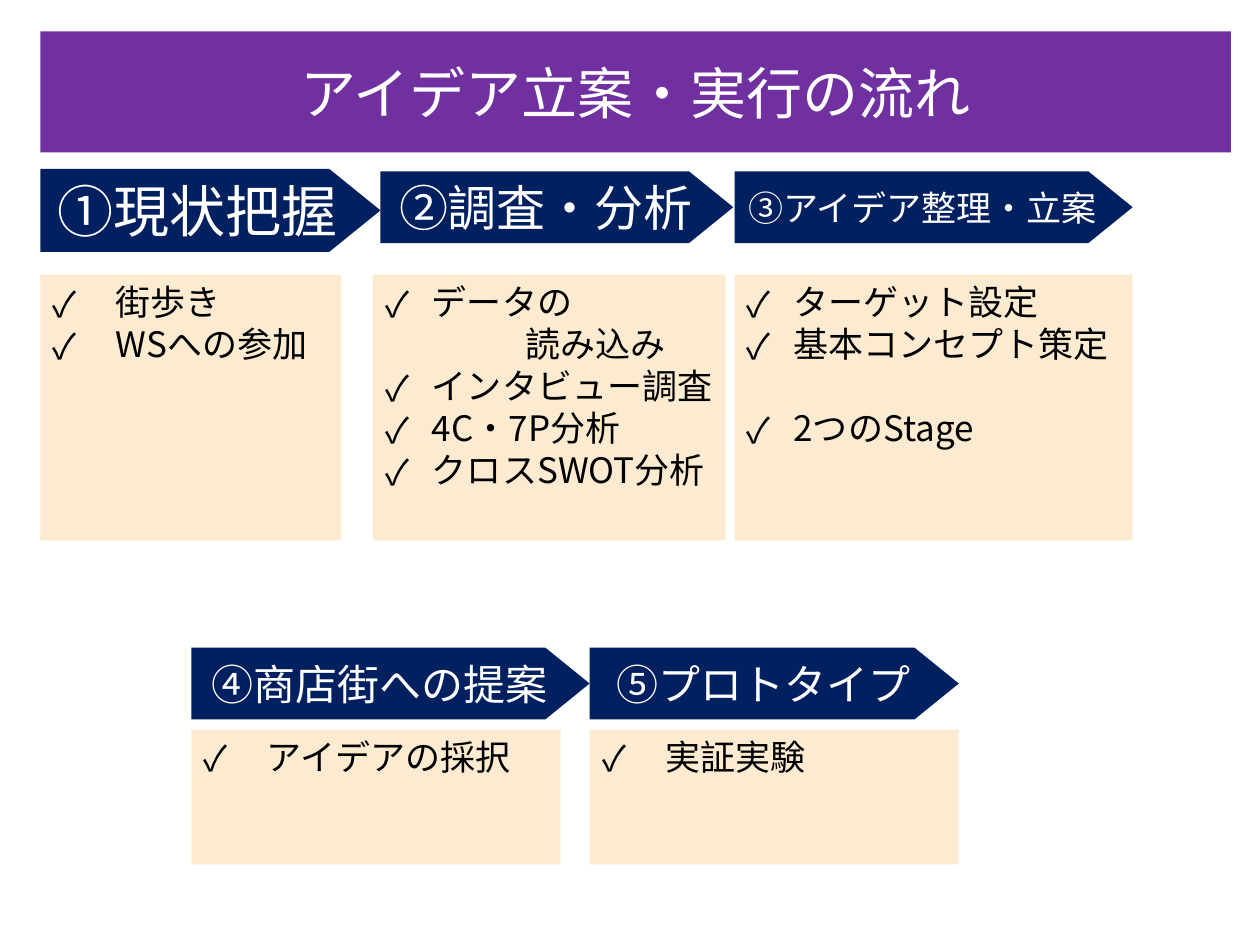
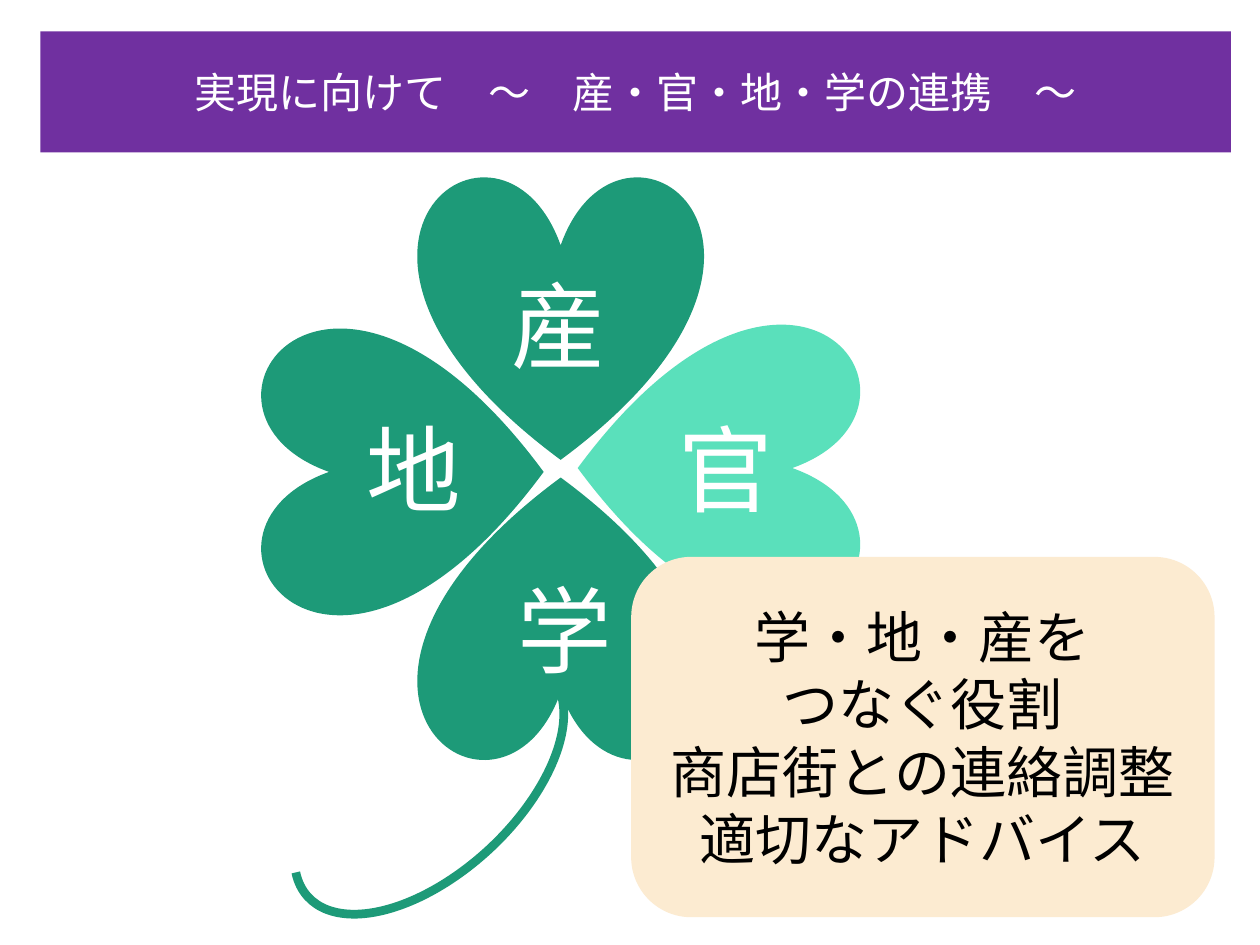
from dataclasses import dataclass
from typing import NamedTuple

from lxml import etree
from pptx import Presentation
from pptx.dml.color import RGBColor
from pptx.enum.shapes import MSO_SHAPE
from pptx.enum.text import MSO_ANCHOR, PP_ALIGN
from pptx.oxml.ns import qn
from pptx.util import Inches, Pt

RECTANGLE = MSO_SHAPE.RECTANGLE
ROUNDED = MSO_SHAPE.ROUNDED_RECTANGLE
PENTAGON = MSO_SHAPE.PENTAGON
HEART = MSO_SHAPE.HEART
ARC = MSO_SHAPE.ARC
TOP, MIDDLE = MSO_ANCHOR.TOP, MSO_ANCHOR.MIDDLE
LEFT, CENTER = PP_ALIGN.LEFT, PP_ALIGN.CENTER

SLIDE_WIDTH, SLIDE_HEIGHT = Inches(10), Inches(7.5)
COLUMN, ROW = SLIDE_WIDTH / 100, SLIDE_HEIGHT / 75
FONT = "Noto Sans CJK JP"
BODY_SIZE = 20
LINE_HEIGHT = 24
COLORS = {
    "band": "7030A0",
    "step": "002060",
    "card": "FCEBD1",
    "leaf": "1D9A78",
    "bright_leaf": "5AE0BB",
    "light": "FFFFFF",
    "dark": "000000",
}


class Box(NamedTuple):
    """A place on the grid, in columns and rows."""

    column: float
    row: float
    columns: float
    rows: float

    def lengths(self) -> tuple[int, int, int, int]:
        """Return left, top, width and height as slide lengths."""
        return (
            round(self.column * COLUMN),
            round(self.row * ROW),
            round(self.columns * COLUMN),
            round(self.rows * ROW),
        )


@dataclass(frozen=True)
class Line:
    """One paragraph with its bullet, indent in inches and space before in points."""

    text: str
    hang: float = 0
    indent: float = 0
    space_before: float = 0


@dataclass(frozen=True)
class Step:
    """A step of the flow: its arrow and the card below it."""

    heading: str
    size: int
    arrow: Box
    card: Box
    lines: tuple[Line, ...]


@dataclass(frozen=True)
class Leaf:
    """A clover leaf with its label."""

    label: str
    color: str
    box: Box
    rotation: float
    label_column: float
    label_row: float


BAND = Box(3.2, 2.5, 94.5, 9.6)
UPPER_ARROW_ROW, UPPER_CARD_ROW, UPPER_CARD_ROWS = 13.6, 21.8, 21.1
LOWER_ARROW_ROW, LOWER_CARD_ROW, LOWER_CARD_ROWS = 51.4, 57.9, 10.7
ARROW_ROWS = 5.7
WIDE, NARROW = 0.5, 0.37

STEPS = (
    Step(
        "①現状把握", 32,
        Box(3.2, 13.4, 27, 6.6),
        Box(3.2, UPPER_CARD_ROW, 23.9, UPPER_CARD_ROWS),
        (Line("街歩き", WIDE), Line("WSへの参加", WIDE)),
    ),
    Step(
        "②調査・分析", 28,
        Box(30.2, UPPER_ARROW_ROW, 28, ARROW_ROWS),
        Box(29.6, UPPER_CARD_ROW, 28, UPPER_CARD_ROWS),
        (
            Line("データの", NARROW),
            Line("読み込み", indent=1.11),
            Line("インタビュー調査", NARROW),
            Line("4C・7P分析", NARROW),
            Line("クロスSWOT分析", NARROW),
        ),
    ),
    Step(
        "③アイデア整理・立案", 20,
        Box(58.3, UPPER_ARROW_ROW, 31.6, ARROW_ROWS),
        Box(58.3, UPPER_CARD_ROW, 31.6, UPPER_CARD_ROWS),
        (
            Line("ターゲット設定", NARROW),
            Line("基本コンセプト策定", NARROW),
            Line("2つのStage", NARROW, space_before=LINE_HEIGHT),
        ),
    ),
    Step(
        "④商店街への提案", 24,
        Box(15.2, LOWER_ARROW_ROW, 31.6, ARROW_ROWS),
        Box(15.2, LOWER_CARD_ROW, 29.3, LOWER_CARD_ROWS),
        (Line("アイデアの採択", WIDE),),
    ),
    Step(
        "⑤プロトタイプ", 24,
        Box(46.8, LOWER_ARROW_ROW, 29.3, ARROW_ROWS),
        Box(46.8, LOWER_CARD_ROW, 29.3, LOWER_CARD_ROWS),
        (Line("実証実験", WIDE),),
    ),
)

LEAF_COLUMNS, LEAF_ROWS = 22.6, 22.7
LEAVES = (
    Leaf("産", "leaf", Box(33.2, 13.8, LEAF_COLUMNS, LEAF_ROWS), 0, 39.6, 20.7),
    Leaf("官", "bright_leaf", Box(45.9, 25.8, LEAF_COLUMNS, LEAF_ROWS), 90, 52.9, 32.1),
    Leaf("地", "leaf", Box(20.5, 26.1, LEAF_COLUMNS, LEAF_ROWS), 270, 28.1, 32.1),
    Leaf("学", "leaf", Box(33.2, 37.9, LEAF_COLUMNS, LEAF_ROWS), 180, 40.1, 44.9),
)
STEM = Box(27.1, 49.3, 13.9, 26.1)
ROLE_CARD = Box(50.1, 44.2, 46.3, 28.6)
ROLES = ("学・地・産を", "つなぐ役割", "商店街との連絡調整", "適切なアドバイス")


def set_values(target, values: dict) -> None:
    """Set every named value on the target."""
    for name, value in values.items():
        setattr(target, name, value)


def format_paragraph(paragraph, line: Line) -> None:
    """Give a paragraph its indent and, if it hangs, a check mark."""
    properties = paragraph._p.get_or_add_pPr()
    properties.set("marL", str(Inches(line.hang + line.indent)))
    properties.set("indent", str(-Inches(line.hang)))
    if line.space_before:
        paragraph.space_before = Pt(line.space_before)
    if line.hang:
        etree.SubElement(properties, qn("a:buFont")).set("typeface", FONT)
        etree.SubElement(properties, qn("a:buChar")).set("char", "✓")


def write_lines(shape, lines: tuple[Line, ...], size: int, color: str,
                anchor=MIDDLE, alignment=CENTER) -> None:
    """Write the lines into the shape, one paragraph each."""
    frame = shape.text_frame
    set_values(frame, {"word_wrap": True, "vertical_anchor": anchor})
    for index, line in enumerate(lines):
        paragraph = frame.add_paragraph() if index else frame.paragraphs[0]
        format_paragraph(paragraph, line)
        paragraph.alignment = alignment
        run = paragraph.add_run()
        run.text = line.text
        set_values(run.font, {"size": Pt(size), "name": FONT})
        run.font.color.rgb = RGBColor.from_string(COLORS[color])
        east_asian = etree.SubElement(run._r.get_or_add_rPr(), qn("a:ea"))
        east_asian.set("typeface", FONT)


def add_filled(slide, kind, box: Box, color: str):
    """Add a preset shape with a plain fill and no line."""
    shape = slide.shapes.add_shape(kind, *box.lengths())
    shape.shadow.inherit = False
    shape.fill.solid()
    shape.fill.fore_color.rgb = RGBColor.from_string(COLORS[color])
    shape.line.fill.background()
    return shape


def add_titled_slide(presentation, title: str, size: int):
    """Add a blank slide with the title band."""
    slide = presentation.slides.add_slide(presentation.slide_layouts[6])
    write_lines(add_filled(slide, RECTANGLE, BAND, "band"), (Line(title),), size, "light")
    return slide


def add_step(slide, step: Step) -> None:
    """Draw one step as an arrow and a card."""
    arrow = add_filled(slide, PENTAGON, step.arrow, "step")
    arrow.adjustments[0] = 0.617
    write_lines(arrow, (Line(step.heading),), step.size, "light")
    card = add_filled(slide, RECTANGLE, step.card, "card")
    write_lines(card, step.lines, BODY_SIZE, "dark", TOP, LEFT)


def add_stem(slide) -> None:
    """Draw the curved stem of the clover."""
    stem = slide.shapes.add_shape(ARC, *STEM.lengths())
    stem.shadow.inherit = False
    stem.fill.background()
    stem.line.color.rgb = RGBColor.from_string(COLORS["leaf"])
    stem.line.width = Pt(5)
    stem.rotation = 47.4
    stem.adjustments[0], stem.adjustments[1] = 162, 59.7


def add_leaf_label(slide, leaf: Leaf) -> None:
    """Write the label of a leaf."""
    box = Box(leaf.label_column, leaf.label_row, 7.6, 10.1)
    label = slide.shapes.add_textbox(*box.lengths())
    write_lines(label, (Line(leaf.label),), 54, "light", TOP, LEFT)


def build_flow_slide(presentation) -> None:
    """Build the slide with the five steps."""
    slide = add_titled_slide(presentation, "アイデア立案・実行の流れ", 32)
    for step in STEPS:
        add_step(slide, step)


def build_clover_slide(presentation) -> None:
    """Build the slide with the four partners as a clover."""
    slide = add_titled_slide(presentation, "実現に向けて　～　産・官・地・学の連携　～", 24)
    for leaf in LEAVES:
        add_filled(slide, HEART, leaf.box, leaf.color).rotation = leaf.rotation
    add_stem(slide)
    for leaf in LEAVES:
        add_leaf_label(slide, leaf)
    card = add_filled(slide, ROUNDED, ROLE_CARD, "card")
    write_lines(card, tuple(Line(role) for role in ROLES), 32, "dark")


def main() -> None:
    """Build and save the presentation."""
    presentation = Presentation()
    set_values(presentation, {"slide_width": SLIDE_WIDTH, "slide_height": SLIDE_HEIGHT})
    build_flow_slide(presentation)
    build_clover_slide(presentation)
    presentation.save("out.pptx")


if __name__ == "__main__":
    main()
